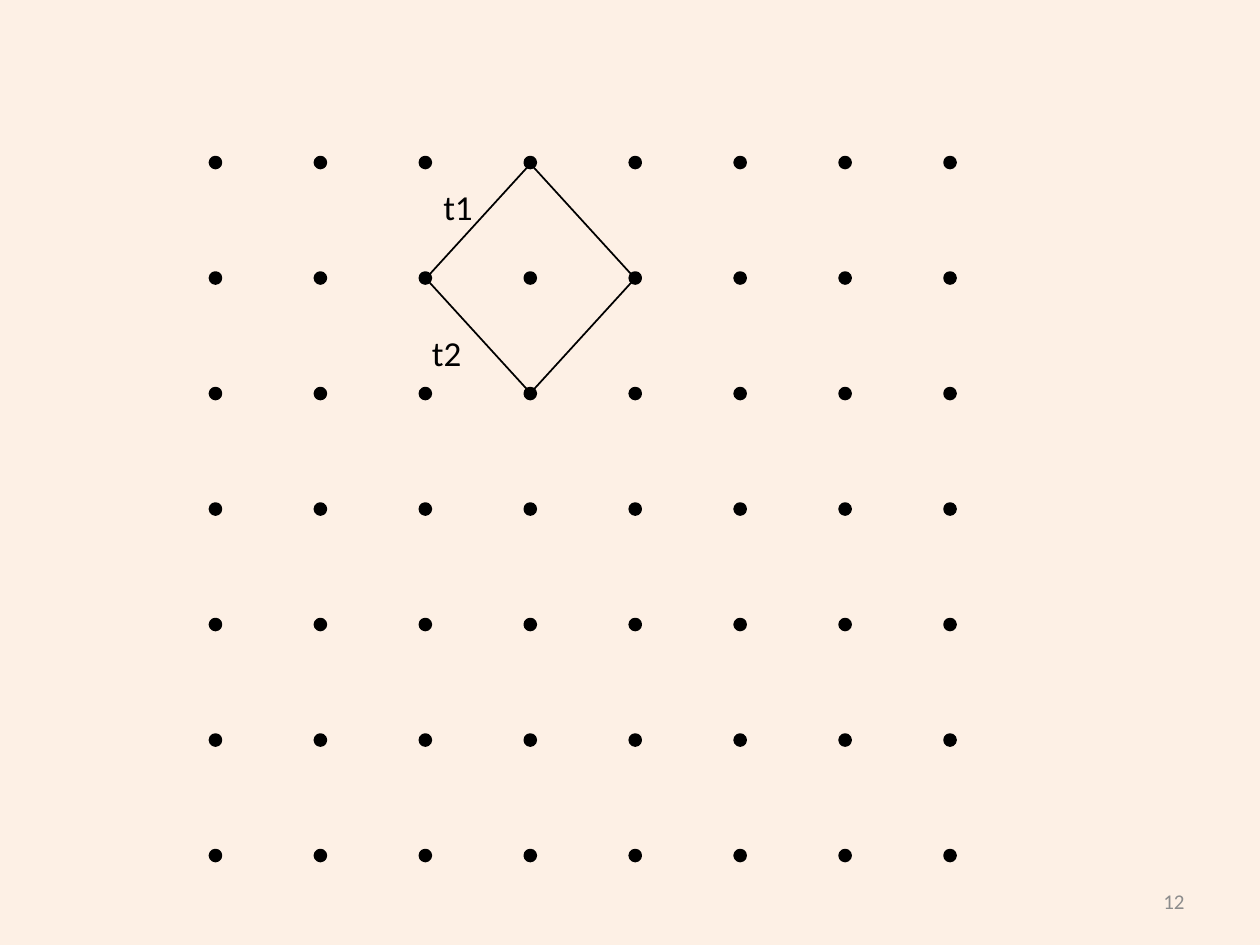
from lxml import etree
from pptx import Presentation
from pptx.dml.color import RGBColor
from pptx.enum.shapes import MSO_CONNECTOR, MSO_SHAPE
from pptx.enum.text import MSO_ANCHOR, MSO_AUTO_SIZE, PP_ALIGN
from pptx.oxml.ns import qn
from pptx.util import Inches, Pt

OVAL = MSO_SHAPE.OVAL
STRAIGHT = MSO_CONNECTOR.STRAIGHT
TOP, MIDDLE = MSO_ANCHOR.TOP, MSO_ANCHOR.MIDDLE
LEFT, RIGHT = PP_ALIGN.LEFT, PP_ALIGN.RIGHT
FIT, NO_FIT = MSO_AUTO_SIZE.SHAPE_TO_FIT_TEXT, MSO_AUTO_SIZE.NONE

COLORS = {"background": "FDEADA", "ink": "000000", "number": "8C8C8C"}
LABEL = {"word_wrap": False, "auto_size": FIT, "vertical_anchor": TOP}
NUMBER = {"word_wrap": True, "auto_size": NO_FIT, "vertical_anchor": MIDDLE}
ROWS, COLS, DOT = 7, 8, 0.08


def rgb(name):
    """Return the named colour."""
    return RGBColor.from_string(COLORS[name])


def set_background(slide, opacity):
    """Fill the background with a partly transparent tint."""
    fill = slide.background.fill
    fill.solid()
    fill.fore_color.rgb = rgb("background")
    clr = slide.background._cSld.find(".//" + qn("a:srgbClr"))
    etree.SubElement(clr, qn("a:alpha")).set("val", str(opacity * 1000))


def add_text(slide, box, text, size, color, frame, align=LEFT):
    """Place one line of text in the box."""
    tf = slide.shapes.add_textbox(*map(Inches, box)).text_frame
    for name, value in frame.items():
        setattr(tf, name, value)
    p = tf.paragraphs[0]
    p.alignment = align
    r = p.add_run()
    r.text = text
    for name, value in {"name": "Calibri", "size": Pt(size)}.items():
        setattr(r.font, name, value)
    r.font.color.rgb = rgb(color)


def add_lattice(slide, box):
    """Spread the dots evenly over the box."""
    x, y, w, h = box
    dx, dy = (w - DOT) / (COLS - 1), (h - DOT) / (ROWS - 1)
    for row in range(ROWS):
        for col in range(COLS):
            dot = (x + col * dx, y + row * dy, DOT, DOT)
            s = slide.shapes.add_shape(OVAL, *map(Inches, dot))
            s.shadow.inherit = False
            s.fill.solid()
            s.fill.fore_color.rgb = rgb("ink")
            s.line.color.rgb = rgb("ink")
            s.line.width = Pt(2)


def add_cell(slide, box):
    """Draw the diamond cell inscribed in the box and label its left sides."""
    x, y, w, h = box
    top, bottom = (x + w / 2, y), (x + w / 2, y + h)
    left, right = (x, y + h / 2), (x + w, y + h / 2)
    for start, end in ((top, left), (right, bottom), (top, right), (left, bottom)):
        s = slide.shapes.add_connector(STRAIGHT, *map(Inches, start + end))
        s.line.color.rgb = rgb("ink")
        s.line.width = Pt(1)
        etree.SubElement(s._element.spPr, qn("a:effectLst"))
    for text, lx, ly in (("t1", 0.04, 0.12), ("t2", -0.05, 1.28)):
        add_text(slide, (x + lx, y + ly, 0.44, 0.44), text, 20, "ink", LABEL)


def main():
    """Build and save the lattice slide."""
    prs = Presentation()
    prs.slide_width, prs.slide_height = Inches(10), Inches(7.5)
    slide = prs.slides.add_slide(prs.slide_layouts[6])
    set_background(slide, 70)
    add_text(slide, (7.17, 6.95, 2.33, 0.4), "12", 12, "number", NUMBER, RIGHT)
    add_lattice(slide, (1.67, 1.25, 5.91, 5.58))
    add_cell(slide, (3.38, 1.3, 1.66, 1.82))
    prs.save("out.pptx")


if __name__ == "__main__":
    main()
